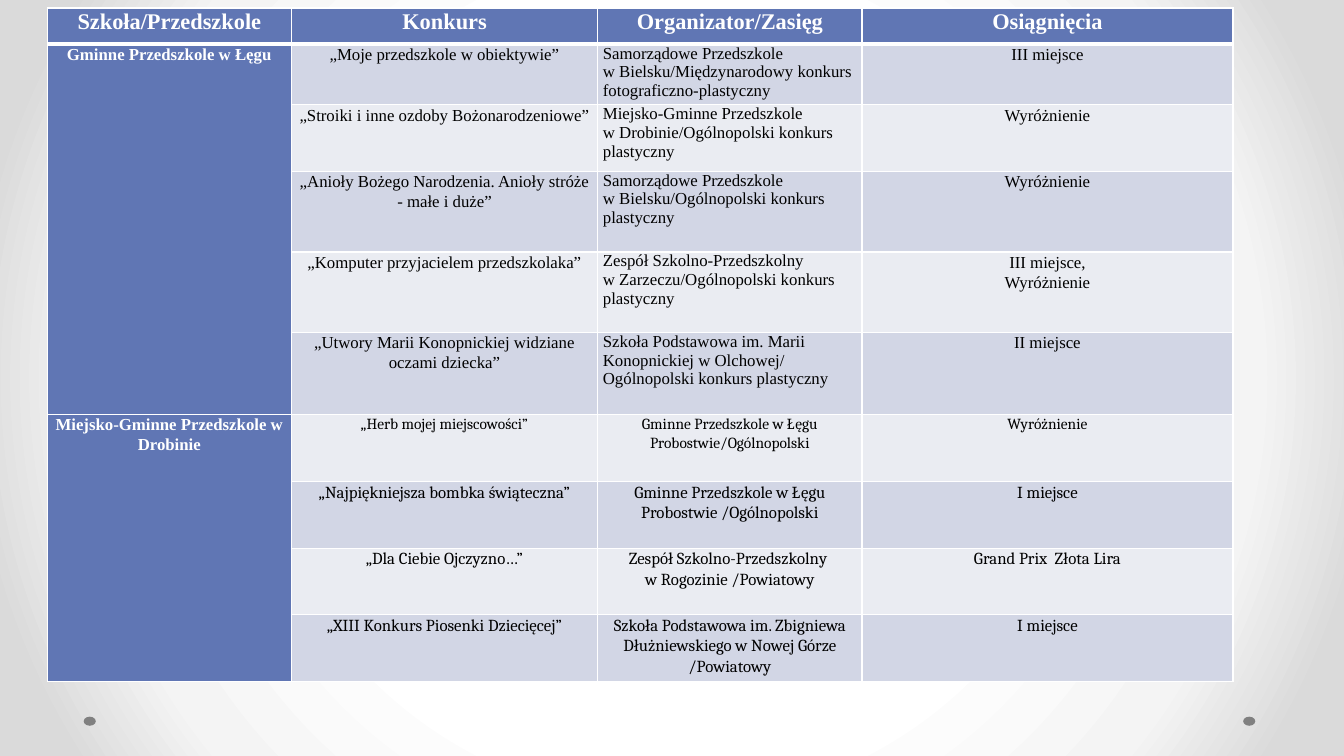
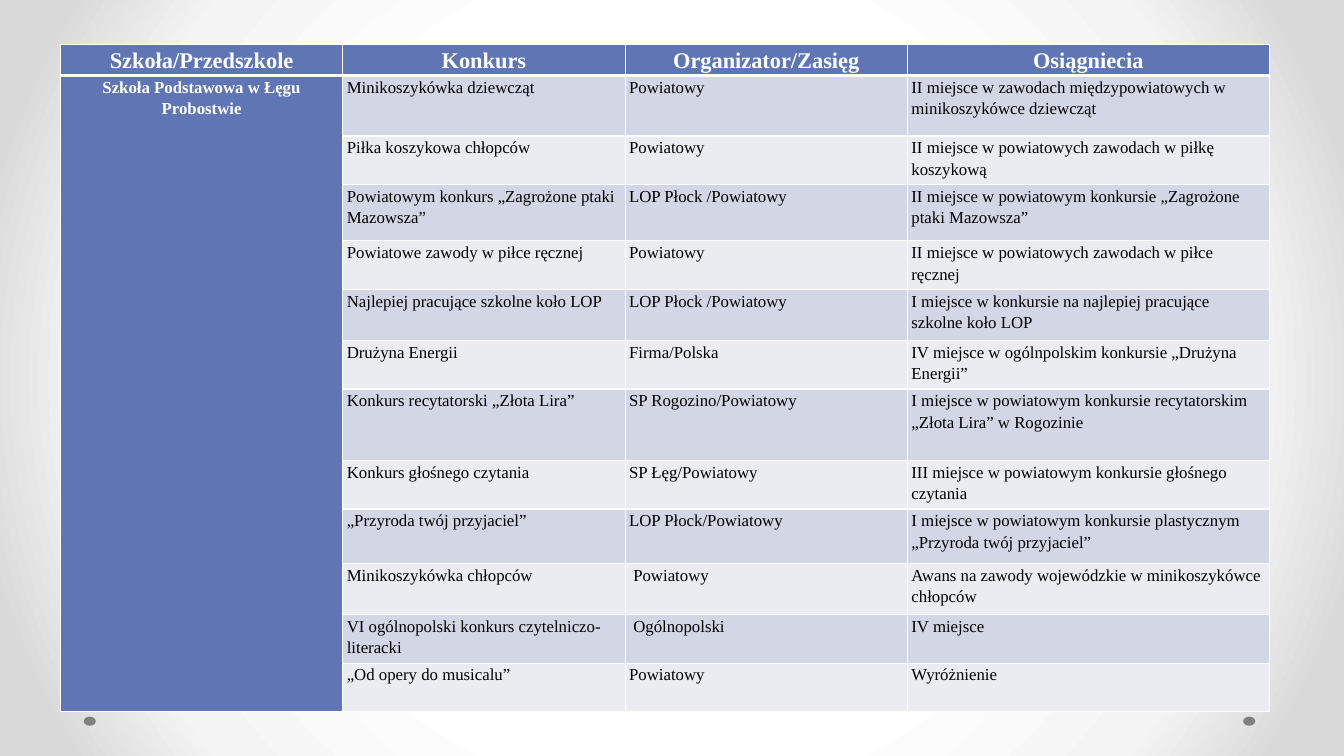
from pptx import Presentation
from pptx.dml.color import RGBColor
from pptx.enum.shapes import MSO_SHAPE
from pptx.enum.text import PP_ALIGN
from pptx.oxml import parse_xml
from pptx.oxml.ns import nsdecls, qn
from pptx.util import Inches, Pt

HEX = {"head": "6076B4", "odd": "D2D6E5", "even": "EAECF2", "white": "FFFFFF",
       "black": "000000", "dot": "808080", "mist": "F4F4F4", "edge": "DADADA"}
STOPS = [(50, "white"), (76, "mist"), (92, "edge")]
DOTS = [12.33, 0.83]
SERIF = "Times New Roman"
MID = (PP_ALIGN.CENTER, 1.07)
TIGHT = (PP_ALIGN.LEFT, 1.0)
LOOSE = (PP_ALIGN.LEFT, 1.15)

# Row: height, text size, contest, organiser, result
TABLES = [
    {
        "at": (0.47, 0.08), "pad": 0.05, "lead": 1.07, "top": 0.36,
        "cols": [2.42, 3.04, 2.62, 3.68],
        "head": ["Szkoła/Przedszkole", "Konkurs", "Organizator/Zasięg", "Osiągnięcia"],
        "groups": [
            {"school": "Gminne Przedszkole w Łęgu", "font": SERIF,
             "forms": [MID, TIGHT, MID],
             "rows": [
                 (0.6, 12, "„Moje przedszkole w obiektywie”",
                  "Samorządowe Przedszkole\n"
                  "w Bielsku/Międzynarodowy konkurs fotograficzno-plastyczny", "III miejsce"),
                 (0.66, 12, "„Stroiki i inne ozdoby Bożonarodzeniowe”",
                  "Miejsko-Gminne Przedszkole\nw Drobinie/Ogólnopolski konkurs plastyczny",
                  "Wyróżnienie"),
                 (0.8, 12, "„Anioły Bożego Narodzenia. Anioły stróże - małe i duże”",
                  "Samorządowe Przedszkole\nw Bielsku/Ogólnopolski konkurs plastyczny",
                  "Wyróżnienie"),
                 (0.8, 12, "„Komputer przyjacielem przedszkolaka”",
                  "Zespół Szkolno-Przedszkolny\nw Zarzeczu/Ogólnopolski konkurs plastyczny",
                  "III miejsce,\nWyróżnienie"),
                 (0.81, 12, "„Utwory Marii Konopnickiej widziane oczami dziecka”",
                  "Szkoła Podstawowa im. Marii Konopnickiej w Olchowej/\n"
                  "Ogólnopolski konkurs plastyczny", "II miejsce"),
             ]},
            {"school": "Miejsko-Gminne Przedszkole w Drobinie", "font": "Cambria",
             "forms": [MID, MID, MID],
             "rows": [
                 (0.67, 11, "„Herb mojej miejscowości”",
                  "Gminne Przedszkole w Łęgu Probostwie/Ogólnopolski", "Wyróżnienie"),
                 (0.66, 12, "„Najpiękniejsza bombka świąteczna”",
                  "Gminne Przedszkole w Łęgu Probostwie /Ogólnopolski", "I miejsce"),
                 (0.66, 12, "„Dla Ciebie Ojczyzno…”",
                  "Zespół Szkolno-Przedszkolny \vw Rogozinie /Powiatowy",
                  "Grand Prix  Złota Lira"),
                 (0.66, 12, "„XIII Konkurs Piosenki Dziecięcej”",
                  "Szkoła Podstawowa im. Zbigniewa Dłużniewskiego w Nowej Górze /Powiatowy",
                  "I miejsce"),
             ]},
        ],
    },
    {
        "at": (0.6, 0.44), "pad": 0.04, "lead": 1.15, "top": 0.31,
        "cols": [2.8, 2.8, 2.8, 3.59],
        "head": ["Szkoła/Przedszkole", "Konkurs", "Organizator/Zasięg", "Osiągniecia"],
        "groups": [
            {"school": "Szkoła Podstawowa w Łęgu Probostwie", "font": SERIF,
             "forms": [LOOSE, LOOSE, LOOSE],
             "rows": [
                 (0.6, 12, "Minikoszykówka dziewcząt", "Powiatowy",
                  "II miejsce w zawodach międzypowiatowych w minikoszykówce dziewcząt"),
                 (0.48, 12, "Piłka koszykowa chłopców", "Powiatowy",
                  "II miejsce w powiatowych zawodach w piłkę koszykową"),
                 (0.56, 12, "Powiatowym konkurs „Zagrożone ptaki Mazowsza”",
                  "LOP Płock /Powiatowy",
                  "II miejsce w powiatowym konkursie „Zagrożone ptaki Mazowsza”"),
                 (0.48, 12, "Powiatowe zawody w piłce ręcznej", "Powiatowy",
                  "II miejsce w powiatowych zawodach w piłce ręcznej"),
                 (0.51, 12, "Najlepiej pracujące szkolne koło LOP", "LOP Płock /Powiatowy",
                  "I miejsce w konkursie na najlepiej pracujące szkolne koło LOP"),
                 (0.48, 12, "Drużyna Energii", "Firma/Polska",
                  "IV miejsce w ogólnpolskim konkursie „Drużyna Energii”"),
                 (0.71, 12, "Konkurs recytatorski „Złota Lira”", "SP Rogozino/Powiatowy",
                  "I miejsce w powiatowym konkursie recytatorskim „Złota Lira” w Rogozinie"),
                 (0.48, 12, "Konkurs głośnego czytania", "SP Łęg/Powiatowy",
                  "III miejsce w powiatowym konkursie głośnego czytania"),
                 (0.54, 12, "„Przyroda twój przyjaciel”", "LOP Płock/Powiatowy",
                  "I miejsce w powiatowym konkursie plastycznym „Przyroda twój przyjaciel”"),
                 (0.51, 12, "Minikoszykówka chłopców", " Powiatowy",
                  "Awans na zawody wojewódzkie w minikoszykówce chłopców"),
                 (0.48, 12, "VI ogólnopolski konkurs czytelniczo- literacki",
                  " Ogólnopolski", "IV miejsce"),
                 (0.48, 12, "„Od opery do musicalu”", "Powiatowy", "Wyróżnienie"),
             ]},
        ],
    },
]


def rgb(name):
    return RGBColor.from_string(HEX[name])


def dress(master, slide):
    """Give the master its round gradient and the two footer dots."""
    master.background.fill.gradient()
    old = master.element.find(".//" + qn("a:gradFill"))
    stops = "".join(f'<a:gs pos="{pos * 1000}"><a:srgbClr val="{HEX[name]}"/></a:gs>'
                    for pos, name in STOPS)
    old.getparent().replace(old, parse_xml(
        f'<a:gradFill {nsdecls("a")} rotWithShape="1"><a:gsLst>{stops}</a:gsLst>'
        '<a:path path="circle"><a:fillToRect l="50000" t="50000" r="50000" b="50000"/>'
        '</a:path></a:gradFill>'))
    tree = master.element.find(".//" + qn("p:spTree"))
    for num, left in enumerate(DOTS, 101):
        dot = slide.shapes.add_shape(MSO_SHAPE.OVAL, Inches(left), Inches(7.11),
                                     Inches(0.12), Inches(0.09))
        dot.shadow.inherit = False
        dot.fill.solid()
        dot.fill.fore_color.rgb = rgb("dot")
        dot.line.fill.background()
        dot.element.find(".//" + qn("p:cNvPr")).set("id", str(num))
        tree.append(dot.element)


def edge(cell, row):
    """Draw white borders, thick between the header and the body."""
    thick = {("B", 0), ("T", 1)}
    props = cell._tc.get_or_add_tcPr()
    for spot, side in enumerate("LRTB"):
        width = Pt(3 if (side, row) in thick else 1)
        props.insert(spot, parse_xml(
            f'<a:ln{side} {nsdecls("a")} w="{width}"><a:solidFill>'
            f'<a:srgbClr val="{HEX["white"]}"/></a:solidFill></a:ln{side}>'))


def write(cell, text, form, font):
    align, lead = form
    cell.text = text
    for para in cell.text_frame.paragraphs:
        para.alignment, para.line_spacing = align, lead
        for run in para.runs:
            for key, val in font.items():
                setattr(run.font, key, val)
            run.font.color.rgb = rgb("white" if font["bold"] else "black")


def build(slide, data):
    groups, cols = data["groups"], data["cols"]
    tall = [data["top"]] + [row[0] for group in groups for row in group["rows"]]
    left, top = data["at"]
    grid = slide.shapes.add_table(len(tall), len(cols), Inches(left), Inches(top),
                                  Inches(sum(cols)), Inches(sum(tall))).table
    grid.horz_banding = False
    for col, width in zip(grid.columns, cols):
        col.width = Inches(width)
    pad = {"margin_left": data["pad"], "margin_right": data["pad"],
           "margin_top": 0, "margin_bottom": 0}
    for r, height in enumerate(tall):
        grid.rows[r].height = Inches(height)
        for c in range(len(cols)):
            cell = grid.cell(r, c)
            for key, val in pad.items():
                setattr(cell, key, Inches(val))
            cell.fill.solid()
            tone = "head" if r == 0 or c == 0 else "odd" if r % 2 else "even"
            cell.fill.fore_color.rgb = rgb(tone)
            edge(cell, r)

    title = (PP_ALIGN.CENTER, data["lead"])
    for c, text in enumerate(data["head"]):
        write(grid.cell(0, c), text, title, {"name": SERIF, "size": Pt(16), "bold": True})
    r = 1
    for group in groups:
        first = grid.cell(r, 0)
        first.merge(grid.cell(r + len(group["rows"]) - 1, 0))
        write(first, group["school"], title, {"name": SERIF, "size": Pt(12), "bold": True})
        for _, size, *texts in group["rows"]:
            font = {"name": group["font"], "size": Pt(size), "bold": False}
            for c, (text, form) in enumerate(zip(texts, group["forms"]), 1):
                write(grid.cell(r, c), text, form, font)
            r += 1


def main():
    deck = Presentation()
    deck.slide_width, deck.slide_height = Inches(13.33), Inches(7.5)
    blank = deck.slide_layouts[6]
    slides = [deck.slides.add_slide(blank) for _ in TABLES]
    dress(deck.slide_master, slides[0])
    for slide, data in zip(slides, TABLES):
        build(slide, data)
    deck.save("out.pptx")


if __name__ == "__main__":
    main()
